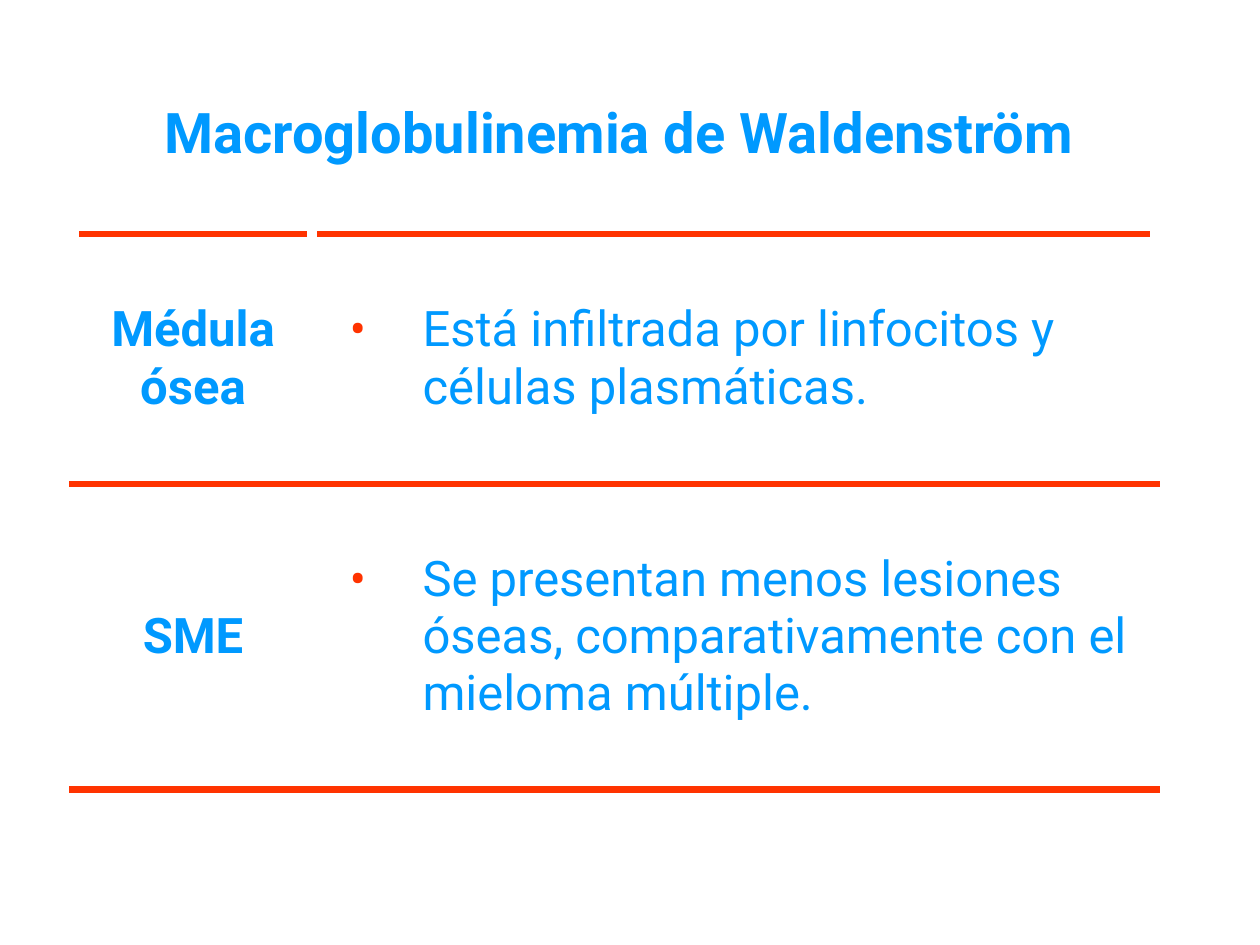
from lxml.etree import SubElement
from pptx import Presentation
from pptx.dml.color import RGBColor
from pptx.enum.text import MSO_ANCHOR as Anchor, PP_ALIGN as Align
from pptx.oxml import parse_xml
from pptx.oxml.ns import nsdecls, qn
from pptx.util import Pt

PX = 914400 / 126
COLORS = {"text": "0099FF", "rule": "FF3300", "side": "FFFFFF"}
FONT = "Roboto"
COLUMN_WIDTHS = (238, 843)
ROW_HEIGHTS = (250, 306)
BORDERS = {"L": ("side", 6), "R": ("side", 6), "T": ("rule", 4.5), "B": ("rule", 4.5)}
TITLE = "Macroglobulinemia de Waldenström"
FINDINGS = (
    ("Médula ósea", "Está infiltrada por linfocitos y células plasmáticas."),
    ("SME", "Se presentan menos lesiones óseas, comparativamente con el mieloma múltiple."),
)


def px(length):
    return round(length * PX)


def write_text(frame, text, size, bold=True, align=Align.CENTER):
    paragraph = frame.paragraphs[0]
    paragraph.alignment = align
    run = paragraph.add_run()
    run.text = text
    formats = {"name": FONT, "size": Pt(size), "bold": bold}
    for key, value in formats.items():
        setattr(run.font, key, value)
    run.font.color.rgb = RGBColor.from_string(COLORS["text"])
    return paragraph


def add_bullet(paragraph):
    props = paragraph._p.get_or_add_pPr()
    props.set("marL", str(px(98)))
    props.set("indent", str(px(-73)))
    color = SubElement(props, qn("a:buClr"))
    SubElement(color, qn("a:srgbClr"), val=COLORS["rule"])
    SubElement(props, qn("a:buFont"), typeface=FONT)
    SubElement(props, qn("a:buChar"), char="•")


def format_cell(cell):
    cell.vertical_anchor = Anchor.MIDDLE
    cell.fill.background()
    props = cell._tc.get_or_add_tcPr()
    for position, (side, (color, width)) in enumerate(BORDERS.items()):
        border = parse_xml(
            f'<a:ln{side} {nsdecls("a")} w="{Pt(width)}"><a:solidFill>'
            f'<a:srgbClr val="{COLORS[color]}"/></a:solidFill></a:ln{side}>')
        props.insert(position, border)


def add_title(slide):
    frame = slide.shapes.add_textbox(px(84), px(66), px(1071), px(131)).text_frame
    frame.word_wrap = True
    frame.vertical_anchor = Anchor.MIDDLE
    write_text(frame, TITLE, 32)


def add_findings(slide):
    table = slide.shapes.add_table(
        len(FINDINGS), len(COLUMN_WIDTHS), px(74), px(234),
        px(sum(COLUMN_WIDTHS)), px(sum(ROW_HEIGHTS))).table
    table.first_row = table.horz_banding = False
    for column, width in zip(table.columns, COLUMN_WIDTHS):
        column.width = px(width)
    for row, height, (topic, finding) in zip(table.rows, ROW_HEIGHTS, FINDINGS):
        row.height = px(height)
        topic_cell, finding_cell = row.cells
        write_text(topic_cell.text_frame, topic, 28)
        add_bullet(write_text(finding_cell.text_frame, finding, 28, False, Align.LEFT))
        for cell in row.cells:
            format_cell(cell)


def main():
    deck = Presentation()
    deck.slide_width, deck.slide_height = px(1260), px(945)
    slide = deck.slides.add_slide(deck.slide_layouts[6])
    add_title(slide)
    add_findings(slide)
    deck.save("out.pptx")


if __name__ == "__main__":
    main()
